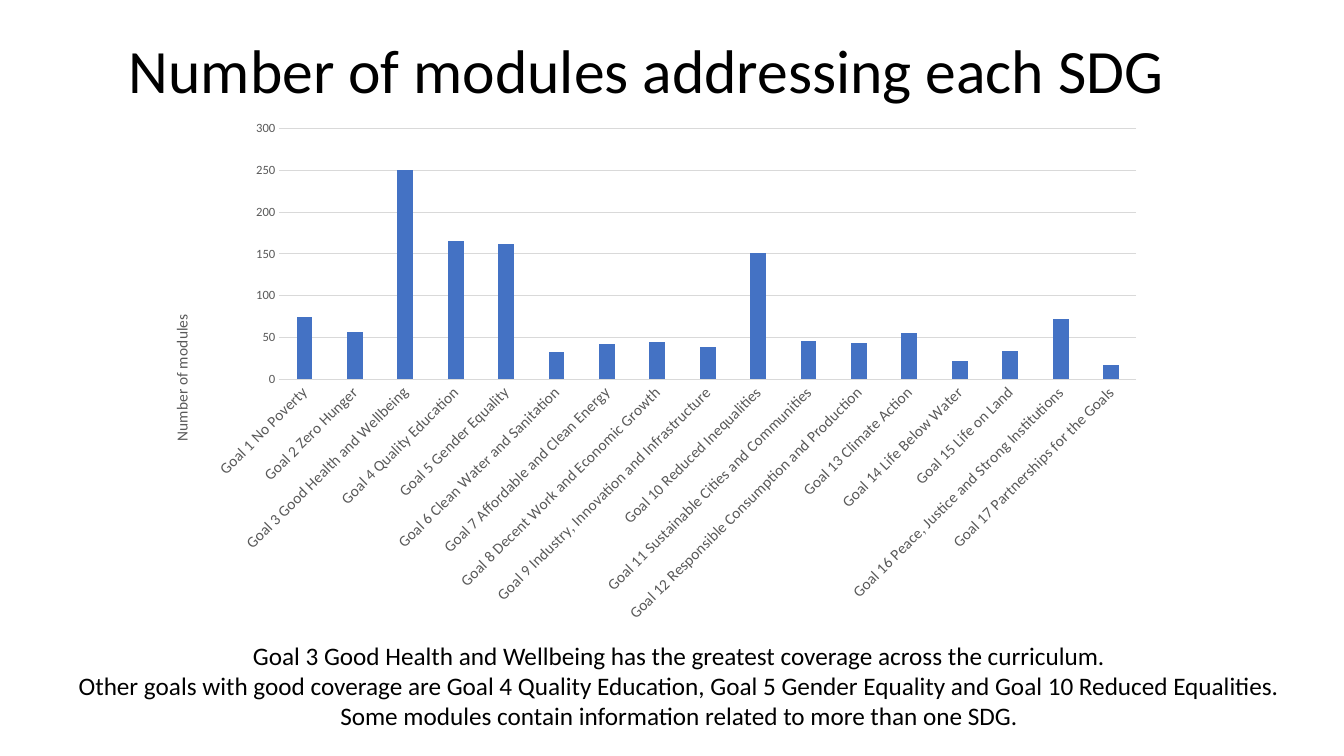
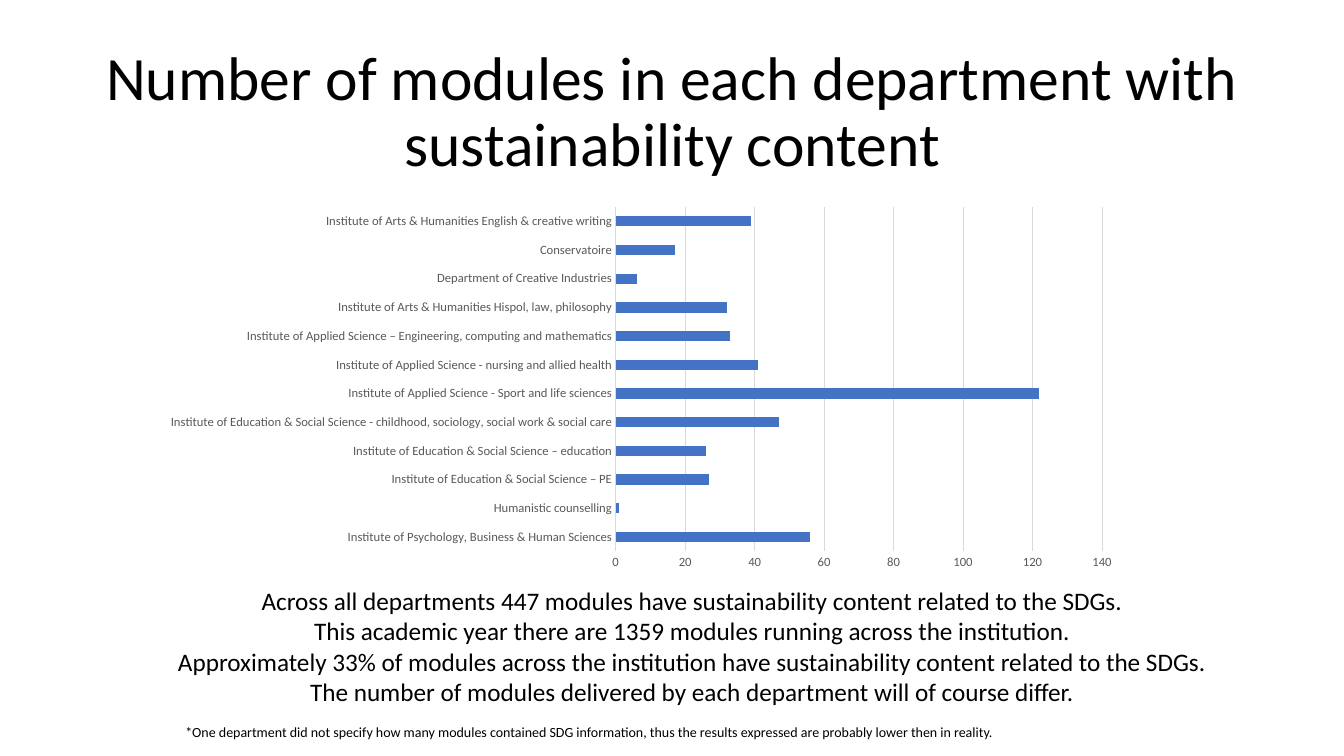
from lxml import etree
from pptx import Presentation, util as u
from pptx.chart.data import CategoryChartData
from pptx.dml.color import RGBColor
from pptx.enum import chart as ch, text
from pptx.oxml.ns import qn

FONT = "Calibri"
BLACK = RGBColor(0x00, 0x00, 0x00)
GREY = RGBColor(0x59, 0x59, 0x59)
RULE = RGBColor(0xD9, 0xD9, 0xD9)
BLUE = RGBColor(0x44, 0x72, 0xC4)

SDG_MODULES = {
    "Goal 1 No Poverty": 74,
    "Goal 2 Zero Hunger": 57,
    "Goal 3 Good Health and Wellbeing": 250,
    "Goal 4 Quality Education": 165,
    "Goal 5 Gender Equality": 162,
    "Goal 6 Clean Water and Sanitation": 32,
    "Goal 7 Affordable and Clean Energy": 42,
    "Goal 8 Decent Work and Economic Growth": 44,
    "Goal 9 Industry, Innovation and Infrastructure": 38,
    "Goal 10 Reduced Inequalities": 151,
    "Goal 11 Sustainable Cities and Communities": 46,
    "Goal 12 Responsible Consumption and Production": 43,
    "Goal 13 Climate Action": 55,
    "Goal 14 Life Below Water": 22,
    "Goal 15 Life on Land": 34,
    "Goal 16 Peace, Justice and Strong Institutions": 72,
    "Goal 17 Partnerships for the Goals": 17,
}
DEPARTMENT_MODULES = {
    "Institute of Psychology, Business & Human Sciences": 56,
    "Humanistic counselling": 1,
    "Institute of Education & Social Science – PE": 27,
    "Institute of Education & Social Science – education": 26,
    "Institute of Education & Social Science - childhood, sociology, social work & social care": 47,
    "Institute of Applied Science - Sport and life sciences": 122,
    "Institute of Applied Science - nursing and allied health": 41,
    "Institute of Applied Science – Engineering, computing and mathematics": 33,
    "Institute of Arts & Humanities Hispol, law, philosophy": 32,
    "Department of Creative Industries": 6,
    "Conservatoire": 17,
    "Institute of Arts & Humanities English & creative writing": 39,
}


def set_font(font, size, color):
    """Give a font the deck's typeface with a size and colour."""
    font.name, font.size, font.bold = FONT, u.Pt(size), False
    font.color.rgb = color


def add_text(s, box, lines, size, align=text.PP_ALIGN.CENTER):
    """Write one paragraph per line in a wrapping box."""
    tf = s.shapes.add_textbox(*map(u.Inches, box)).text_frame
    tf.word_wrap = True
    tf.text = "\n".join(lines)
    for p in tf.paragraphs:
        p.alignment = align
        for r in p.runs:
            set_font(r.font, size, BLACK)
    return tf


def add_title(s, box, title, align=text.PP_ALIGN.CENTER):
    """Write the slide title, centred vertically in its box."""
    tf = add_text(s, box, [title], 44, align)
    tf.vertical_anchor = text.MSO_ANCHOR.MIDDLE
    tf.paragraphs[0].line_spacing = 0.9


def place(parent, index, **fractions):
    """Fix a chart part at fractions of the chart area."""
    old = parent.find(qn("c:layout"))
    if old is not None:
        parent.remove(old)
    layout = etree.Element(qn("c:layout"))
    parent.insert(index, layout)
    manual = etree.SubElement(layout, qn("c:manualLayout"))
    if "w" in fractions:
        etree.SubElement(manual, qn("c:layoutTarget")).set("val", "inner")
    for key in ("x", "y"):
        etree.SubElement(manual, qn(f"c:{key}Mode")).set("val", "edge")
    for key, value in fractions.items():
        etree.SubElement(manual, qn(f"c:{key}")).set("val", str(value))


def add_bars(s, box, kind, counts, gap, top, step, label_size):
    """Draw a single-series bar chart in the deck's style."""
    data = CategoryChartData()
    data.categories = list(counts)
    data.add_series("Series 1", list(counts.values()))
    chart = s.shapes.add_chart(kind, *map(u.Inches, box), data).chart
    chart.has_title = chart.has_legend = False
    set_font(chart.font, 10, BLACK)
    plot = chart.plots[0]
    plot.gap_width, plot.vary_by_categories = gap, False
    fill = plot.series[0].format.fill
    fill.solid()
    fill.fore_color.rgb = BLUE
    cat, val = chart.category_axis, chart.value_axis
    for axis, size in ((cat, label_size), (val, 9)):
        axis.major_tick_mark = axis.minor_tick_mark = ch.XL_TICK_MARK.NONE
        set_font(axis.tick_labels.font, size, GREY)
    val.minimum_scale, val.maximum_scale, val.major_unit = 0, top, step
    val.has_major_gridlines = True
    for line in (cat.format.line, val.major_gridlines.format.line):
        line.color.rgb, line.width = RULE, u.Pt(0.75)
    val.format.line.fill.background()
    return chart


def add_sdg_chart(s, box):
    """Draw the columns per goal with slanted labels and an axis title."""
    chart = add_bars(s, box, ch.XL_CHART_TYPE.COLUMN_CLUSTERED, SDG_MODULES, 219, 300, 50, 11)
    chart.plots[0].overlap = -27
    chart.category_axis._element.find(qn("c:txPr")).find(qn("a:bodyPr")).set("rot", "-2700000")
    title = chart.value_axis.axis_title
    tf = title.text_frame
    tf.text = "Number of modules"
    set_font(tf.paragraphs[0].runs[0].font, 11, GREY)
    body = tf._txBody.find(qn("a:bodyPr"))
    body.set("rot", "-5400000")
    body.set("vert", "horz")
    place(title._element, 1, x=0.02, y=0.38)
    place(chart._chartSpace.chart.plotArea, 0, x=0.13, y=0.03, w=0.85, h=0.48)


def sdg_slide(prs):
    """Build the slide on modules per goal."""
    s = prs.slides.add_slide(prs.slide_layouts[6])
    add_title(s, (1.18, 0, 11.5, 1.45), "Number of modules addressing each SDG", text.PP_ALIGN.LEFT)
    add_sdg_chart(s, (1.47, 1.12, 10, 5.18))
    add_text(s, (0.48, 6.3, 12.51, 1.0), [
        "Goal 3 Good Health and Wellbeing has the greatest coverage across the curriculum.",
        "Other goals with good coverage are Goal 4 Quality Education, Goal 5 Gender Equality "
        "and Goal 10 Reduced Equalities.",
        "Some modules contain information related to more than one SDG.",
    ], 18)


def department_slide(prs):
    """Build the slide on modules per department."""
    s = prs.slides.add_slide(prs.slide_layouts[6])
    add_title(s, (0.92, 0.4, 11.5, 1.45),
              "Number of modules in each department with sustainability content")
    add_text(s, (0.83, 5.76, 12.07, 1.3), [
        "Across all departments 447 modules have sustainability content related to the SDGs.",
        "This academic year there are 1359 modules running across the institution.",
        "Approximately 33% of modules across the institution have sustainability content "
        "related to the SDGs.",
        "The number of modules delivered by each department will of course differ.",
    ], 18)
    add_text(s, (1.74, 7.13, 11.5, 0.27), [
        "*One department did not specify how many modules contained SDG information, "
        "thus the results expressed are probably lower then in reality.",
    ], 10, text.PP_ALIGN.LEFT)
    add_bars(s, (1.5, 1.98, 9.72, 3.75), ch.XL_CHART_TYPE.BAR_CLUSTERED,
             DEPARTMENT_MODULES, 182, 140, 20, 9)


def main():
    """Build and save the deck."""
    prs = Presentation()
    prs.slide_width, prs.slide_height = u.Inches(13.33), u.Inches(7.5)
    sdg_slide(prs)
    department_slide(prs)
    prs.save("out.pptx")


if __name__ == "__main__":
    main()
